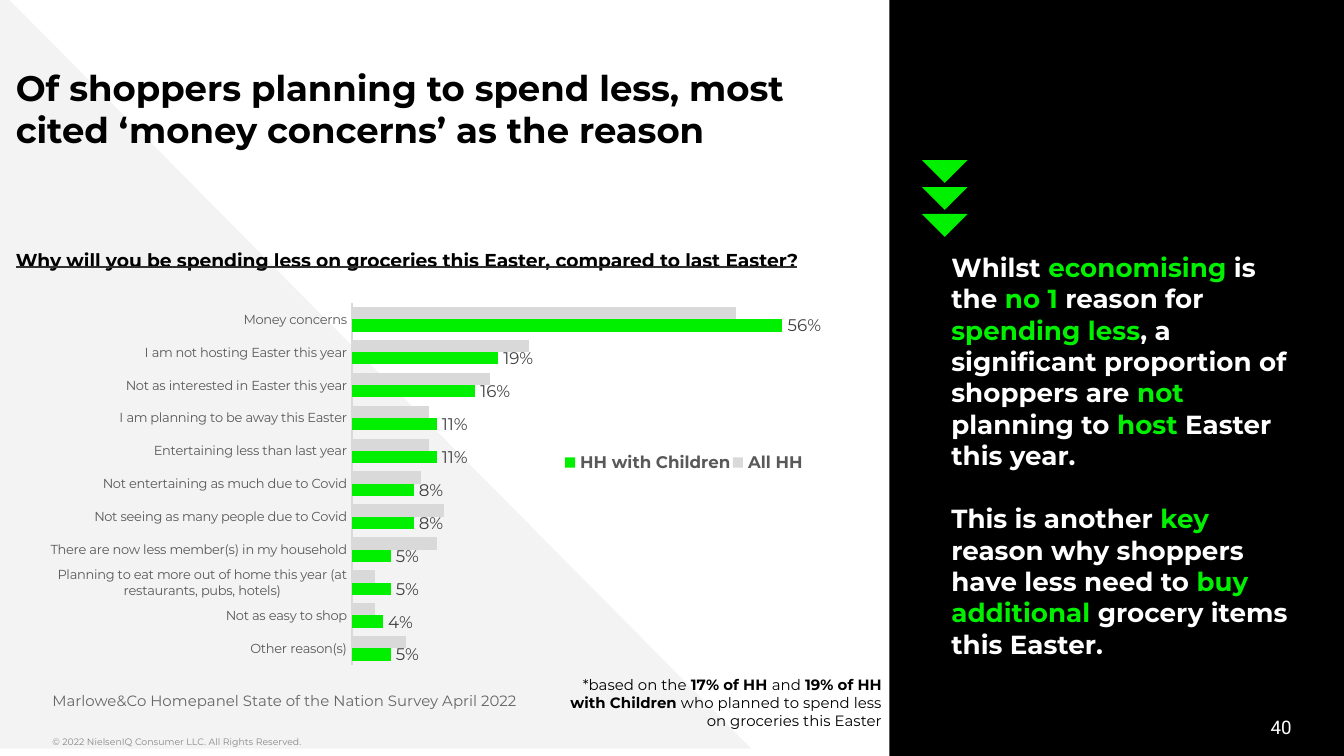
from lxml import etree
from pptx import Presentation
from pptx import util as u
from pptx.chart.data import CategoryChartData
from pptx.dml.color import RGBColor
from pptx.enum import chart as charts, shapes, text
from pptx.oxml import ns

BLACK = RGBColor(0x00, 0x00, 0x00)
WHITE = RGBColor(0xFF, 0xFF, 0xFF)
GREEN = RGBColor(0x00, 0xF0, 0x00)
PALE = RGBColor(0xF3, 0xF3, 0xF3)
SILVER = RGBColor(0xD9, 0xD9, 0xD9)
COPYRIGHT = RGBColor(0x88, 0x88, 0x88)
SOURCE = RGBColor(0x66, 0x66, 0x66)
AXIS = RGBColor(0x59, 0x59, 0x59)
LABEL = RGBColor(0x40, 0x40, 0x40)
RULE = RGBColor(0x33, 0x33, 0x33)
FONT = "Montserrat"

# Reason, all households, households with children
REASONS = [
    ("Money concerns", 0.50, 0.56),
    ("I am not hosting Easter this year", 0.23, 0.19),
    ("Not as interested in Easter this year", 0.18, 0.16),
    ("I am planning to be away this Easter", 0.10, 0.11),
    ("Entertaining less than last year", 0.10, 0.11),
    ("Not entertaining as much due to Covid", 0.09, 0.08),
    ("Not seeing as many people due to Covid", 0.12, 0.08),
    ("There are now less member(s) in my household", 0.11, 0.05),
    ("Planning to eat more out of home this year (at restaurants, pubs, hotels)", 0.03, 0.05),
    ("Not as easy to shop", 0.03, 0.04),
    ("Other reason(s)", 0.07, 0.05),
]

# Spans alternate between plain and highlighted
TAKEAWAYS = [
    ["Whilst ", "economising", " is the ", "no 1 ", "reason for ", "spending less",
     ", a significant proportion of shoppers are ", "not", " planning to ", "host",
     " Easter this year."],
    ["This is another ", "key", " reason why shoppers have less need to", " buy additional ",
     "grocery items this Easter."],
]
NOTE = ["*based on the ", "17% of HH ", "and ", "19% of HH with Children",
        " who planned to spend less on groceries this Easter"]


def set_font(font, size, color, bold=False, name=FONT):
    font.name, font.size, font.bold = name, u.Pt(size), bold
    font.color.rgb = color


def set_layout(parent, index, inner=False, **fractions):
    """Give a chart part a fixed place, as fractions of the chart."""
    for old in parent.findall(ns.qn("c:layout")):
        parent.remove(old)
    layout = etree.Element(ns.qn("c:layout"))
    manual = etree.SubElement(layout, ns.qn("c:manualLayout"))
    settings = {"layoutTarget": "inner"} if inner else {}
    settings.update(xMode="edge", yMode="edge", **fractions)
    for tag, value in settings.items():
        etree.SubElement(manual, ns.qn("c:" + tag)).set("val", str(value))
    parent.insert(index, layout)


class Slide:
    def __init__(self, deck):
        self.page = deck.slides.add_slide(deck.slide_layouts[5])

    def shape(self, kind, left, top, width, height, fill, rotation=0):
        shape = self.page.shapes.add_shape(
            kind, u.Cm(left), u.Cm(top), u.Cm(width), u.Cm(height))
        shape.shadow.inherit = False
        shape.fill.solid()
        shape.fill.fore_color.rgb = fill
        shape.line.fill.background()
        shape.rotation = rotation

    def fill_text(self, box, paragraphs, size, color, bold=False, name=FONT, accent=None,
                  align=text.PP_ALIGN.LEFT, anchor=text.MSO_ANCHOR.TOP,
                  inset=(0, 0.13), gap=0):
        frame = box.text_frame
        frame.word_wrap = True
        frame.auto_size = text.MSO_AUTO_SIZE.NONE
        frame.vertical_anchor = anchor
        frame.margin_left = frame.margin_right = u.Cm(inset[0])
        frame.margin_top = frame.margin_bottom = u.Cm(inset[1])
        for number, spans in enumerate(paragraphs):
            para = frame.add_paragraph() if number else frame.paragraphs[0]
            para.alignment = align
            para.space_before = u.Pt(gap if number else 0)
            set_font(para.font, size, color, bold, name)
            for position, words in enumerate(spans):
                span = para.add_run()
                span.text = words
                if position % 2:
                    if accent is None:
                        span.font.bold = True
                    else:
                        span.font.color.rgb = accent

    def text(self, left, top, width, height, paragraphs, size, color, **style):
        box = self.page.shapes.add_textbox(
            u.Cm(left), u.Cm(top), u.Cm(width), u.Cm(height))
        self.fill_text(box, paragraphs, size, color, **style)

    def title(self, left, top, width, height, words):
        box = self.page.shapes.title
        box.left, box.top, box.width, box.height = map(u.Cm, (left, top, width, height))
        self.fill_text(box, [[words]], 19, BLACK, bold=True, inset=(0, 0.25))
        box.element.getparent().append(box.element)  # in front of the backdrop

    def line(self, left, top, right, bottom, color):
        line = self.page.shapes.add_connector(
            shapes.MSO_CONNECTOR.STRAIGHT, u.Cm(left), u.Cm(top), u.Cm(right), u.Cm(bottom))
        line.line.color.rgb = color
        line.line.width = u.Pt(0.75)
        etree.SubElement(line.element.spPr, ns.qn("a:effectLst"))

    def bar_chart(self, left, top, width, height):
        names, everyone, families = zip(*REASONS)
        data = CategoryChartData(number_format="0%")
        data.categories = names
        data.add_series("All HH", everyone)
        data.add_series("HH with Children", families)
        chart = self.page.shapes.add_chart(
            charts.XL_CHART_TYPE.BAR_CLUSTERED, u.Cm(left), u.Cm(top),
            u.Cm(width), u.Cm(height), data).chart
        chart.has_title = False
        set_font(chart.font, 10, BLACK, name="Arial")

        # Axes
        category = chart.category_axis
        category.reverse_order = True
        category.major_tick_mark = charts.XL_TICK_MARK.NONE
        category.format.line.color.rgb = SILVER
        category.format.line.width = u.Pt(0.75)
        set_font(category.tick_labels.font, 7, AXIS)
        value = chart.value_axis
        value.minimum_scale, value.maximum_scale = 0, 0.6
        value.has_major_gridlines = False
        value.visible = False

        # Bars and labels
        plot = chart.plots[0]
        plot.gap_width, plot.overlap = 67, 0
        plot.vary_by_categories = False
        for series, color in zip(plot.series, (SILVER, GREEN)):
            series.format.fill.solid()
            series.format.fill.fore_color.rgb = color
        labels = plot.series[1].data_labels
        labels.show_value = True
        labels.number_format, labels.number_format_is_linked = "0%", False
        labels.position = charts.XL_LABEL_POSITION.OUTSIDE_END
        set_font(labels.font, 9, LABEL)

        # Legend and plot placement
        chart.has_legend = True
        legend = chart.legend
        legend.position = charts.XL_LEGEND_POSITION.BOTTOM
        legend.include_in_layout = False
        set_font(legend.font, 9, AXIS, bold=True)
        set_layout(legend.element if hasattr(legend, "element") else legend._element, 1,
                   x=0.69, y=0.44, w=0.3, h=0.08)
        plot_area = chart.element.find(".//" + ns.qn("c:plotArea")) if hasattr(
            chart, "element") else chart._chartSpace.find(".//" + ns.qn("c:plotArea"))
        set_layout(plot_area, 0, inner=True, x=0.43, y=0.07, w=0.57, h=0.93)


def main():
    deck = Presentation()
    deck.slide_width, deck.slide_height = u.Cm(25.4), u.Cm(14.29)
    slide = Slide(deck)

    # Backdrop
    slide.shape(shapes.MSO_SHAPE.RECTANGLE, 16.81, 0, 8.59, 14.29, BLACK)
    slide.shape(shapes.MSO_SHAPE.RIGHT_TRIANGLE, 0, -0.18, 14.2, 14.33, PALE)

    # Title and question
    slide.title(0.3, 0.99, 16.41, 1.85,
                "Of shoppers planning to spend less, most cited ‘money concerns’ as the reason")
    slide.bar_chart(0.08, 5.21, 15.44, 7.37)
    slide.text(0.05, 4.57, 15.8, 0.69,
               [["Why will you be spending less on groceries this Easter, "
                 "compared to last Easter?"]],
               10, BLACK, bold=True, inset=(0.25, 0.13))
    slide.line(0.3, 5.05, 15.06, 5.05, RULE)

    # Takeaways under three arrowheads
    for step in range(3):
        slide.shape(shapes.MSO_SHAPE.RIGHT_TRIANGLE, 17.55, 2.72 + 0.51 * step,
                    0.61, 0.61, GREEN, rotation=315)
    slide.text(17.98, 4.62, 6.76, 7.09, TAKEAWAYS, 14, WHITE, bold=True,
               accent=GREEN, gap=17)

    # Source, note and footer
    slide.text(0.99, 12.8, 15.42, 0.86,
               [["Marlowe&Co Homepanel State of the Nation Survey April 2022"]],
               8, SOURCE, anchor=text.MSO_ANCHOR.BOTTOM, inset=(0, 0.25))
    slide.text(10.16, 12.65, 6.76, 1.27, [NOTE], 8, BLACK,
               align=text.PP_ALIGN.RIGHT, inset=(0.25, 0.13))
    slide.text(0.99, 13.79, 14.07, 0.51,
               [["© 2022 NielsenIQ Consumer LLC. All Rights Reserved."]], 5, COPYRIGHT)
    slide.text(18.69, 13.36, 5.72, 0.76, [["40"]], 10, WHITE, name="Roboto",
               align=text.PP_ALIGN.RIGHT, anchor=text.MSO_ANCHOR.MIDDLE)

    deck.save("out.pptx")


if __name__ == "__main__":
    main()
